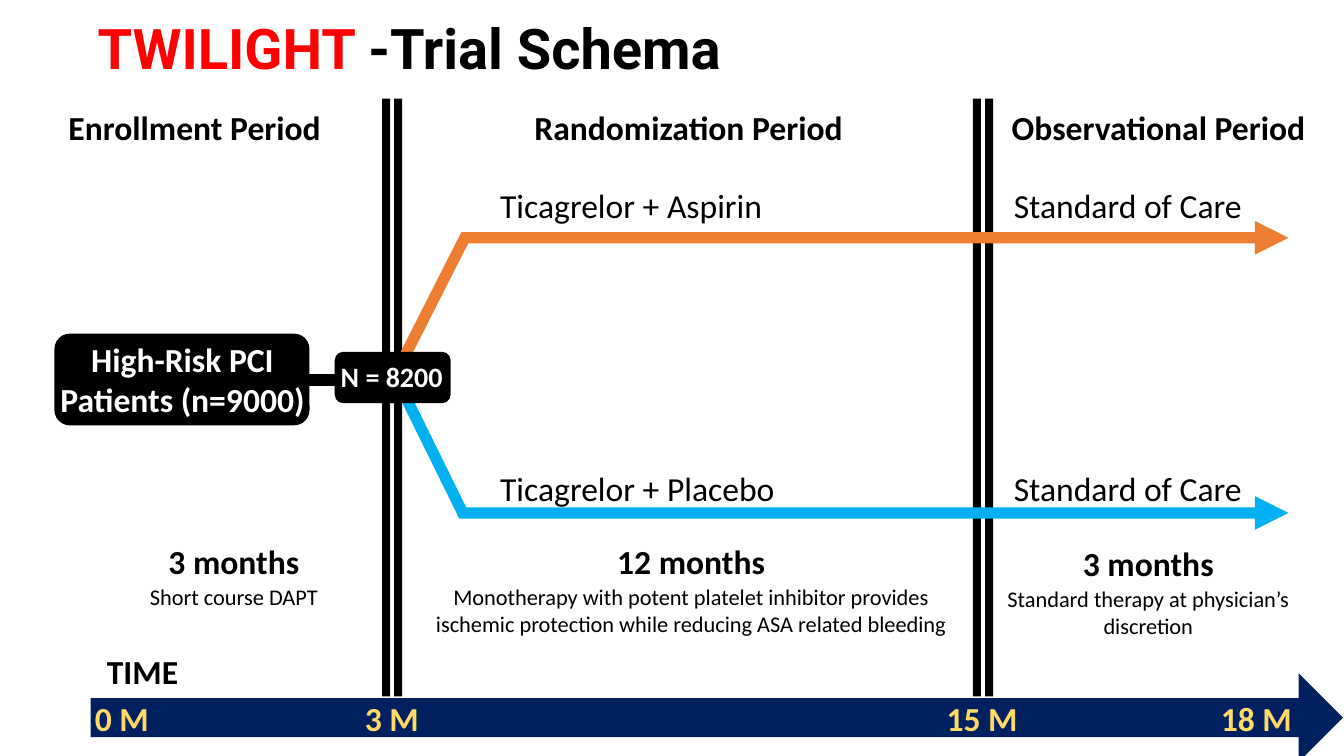
from lxml import etree
from pptx import Presentation
from pptx.dml.color import RGBColor
from pptx.enum.shapes import MSO_CONNECTOR, MSO_SHAPE
from pptx.enum.text import PP_ALIGN
from pptx.oxml.ns import qn
from pptx.util import Inches, Pt

RECT = MSO_SHAPE.RECTANGLE
ROUND = MSO_SHAPE.ROUNDED_RECTANGLE
ARROW = MSO_SHAPE.RIGHT_ARROW
LINE = MSO_CONNECTOR.STRAIGHT
LEFT, MID = PP_ALIGN.LEFT, PP_ALIGN.CENTER

HUES = {"black": "000000", "white": "FFFFFF", "red": "FF0000", "navy": "002060",
        "orange": "ED7D31", "blue": "00B0F0", "gold": "FFD966"}
BASE = {"name": "Calibri", "size": Pt(24), "bold": False}
HEAD = BASE | {"bold": True}
NOTE = BASE | {"size": Pt(16)}
COUNT = HEAD | {"size": Pt(20)}
TITLE = HEAD | {"name": "Roboto", "size": Pt(40)}
PAD = (0.1, 0.05, 0.1, 0.05)
SLIM = (0, 0.05, 0, 0.05)
HALF = (0.1, 0.05, 0, 0.05)
SIDES = ("left", "top", "right", "bottom")


def color(hue):
    return RGBColor.from_string(HUES[hue])


def add_run(para, words, style, hue):
    run = para.add_run()
    run.text = words
    for name, value in style.items():
        setattr(run.font, name, value)
    run.font.color.rgb = color(hue)


def add_text(slide, place, paras, align=LEFT, inset=PAD):
    frame = slide.shapes.add_textbox(*map(Inches, place)).text_frame
    frame.word_wrap = True
    for side, gap in zip(SIDES, inset):
        setattr(frame, f"margin_{side}", Inches(gap))
    for index, runs in enumerate(paras):
        para = frame.add_paragraph() if index else frame.paragraphs[0]
        para.alignment = align
        if index:
            para.space_before = Pt(1)
        for run in runs:
            add_run(para, *run)


def add_label(slide, place, words, style=BASE, hue="black", align=LEFT, inset=PAD):
    add_text(slide, place, [[(words, style, hue)]], align, inset)


def add_block(slide, kind, place, hue):
    block = slide.shapes.add_shape(kind, *map(Inches, place))
    block.shadow.inherit = False
    block.fill.solid()
    block.fill.fore_color.rgb = color(hue)
    block.line.fill.background()
    return block


def add_arm(slide, points, hue):
    spots = [(Inches(x), Inches(y)) for x, y in points]
    pen = slide.shapes.build_freeform(*spots[0])
    pen.add_line_segments(spots[1:], close=False)
    arm = pen.convert_to_shape()
    arm.shadow.inherit = False
    arm.fill.background()
    arm.line.color.rgb = color(hue)
    arm.line.width = Pt(8)
    edge = arm.line._get_or_add_ln()
    etree.SubElement(edge, qn("a:miter"), lim="800000")
    etree.SubElement(edge, qn("a:tailEnd"), type="triangle")


def add_link(slide, start, end, hue):
    link = slide.shapes.add_connector(LINE, *map(Inches, start + end))
    link.line.color.rgb = color(hue)
    link.line.width = Pt(8)
    etree.SubElement(link._element.spPr, qn("a:effectLst"))


def add_time(slide):
    arrow = add_block(slide, ARROW, (0.9, 6.68, 12.42, 0.88), "navy")
    arrow.adjustments[0] = 0.44
    for left in (3.79, 9.65):
        for shift in (0, 0.12):
            add_block(slide, RECT, (left + shift, 0.98, 0.08, 5.93), "black")
    for left, width, words, inset in (
        (0.94, 0.6, "0 M", SLIM),
        (3.52, 0.76, "3 M", PAD),
        (9.29, 0.99, "15 M", PAD),
        (12.01, 0.99, "18 M", PAD),
    ):
        add_label(slide, (left, 6.87, width, 0.5), words, HEAD, "gold", inset=inset)
    add_label(slide, (1.06, 6.41, 0.8, 0.5), "TIME", HEAD, inset=SLIM)


def add_phases(slide):
    for left, width, words in (
        (0.09, 3.68, "Enrollment Period"),
        (4.08, 5.5, "Randomization Period"),
        (9.88, 3.22, "Observational Period"),
    ):
        add_label(slide, (left, 1.01, width, 0.5), words, HEAD, align=MID)
    for place, span, note, inset in (
        ((0.87, 5.32, 2.9, 0.79), "3 months", "Short course DAPT", PAD),
        ((4.03, 5.32, 5.55, 1.06), "12 months",
         "Monotherapy with potent platelet inhibitor provides ischemic protection "
         "while reducing ASA related bleeding", HALF),
        ((9.89, 5.34, 2.9, 1.06), "3 months",
         "Standard therapy at physician’s discretion", HALF),
    ):
        paras = [[(span, HEAD, "black")], [(note, NOTE, "black")]]
        add_text(slide, place, paras, MID, inset)


def add_arms(slide):
    for start, bend, level, top, drug, hue in (
        (3.72, 4.61, 2.36, 1.79, "Aspirin", "orange"),
        (3.73, 4.59, 5.09, 4.59, "Placebo", "blue"),
    ):
        add_arm(slide, [(3.92, start), (bend, level), (12.78, level)], hue)
        add_label(slide, (4.96, top, 2.88, 0.5), f"Ticagrelor + {drug}", inset=SLIM)
        add_label(slide, (9.99, top, 2.39, 0.5), "Standard of Care", align=MID, inset=SLIM)


def add_groups(slide):
    add_link(slide, (2.03, 3.77), (3.97, 3.77), "black")
    add_block(slide, ROUND, (0.54, 3.31, 2.53, 0.91), "black")
    add_label(slide, (0.59, 3.31, 2.44, 0.91), "High-Risk PCI Patients (n=9000)",
              HEAD, "white", MID, SLIM)
    add_block(slide, ROUND, (3.32, 3.49, 1.15, 0.51), "black")
    add_label(slide, (3.38, 3.57, 1.07, 0.34), "N = 8200", COUNT, "white",
              inset=(0, 0, 0, 0))


def main():
    deck = Presentation()
    deck.slide_width, deck.slide_height = Inches(13.33), Inches(7.5)
    slide = deck.slides.add_slide(deck.slide_layouts[6])
    title = [("TWILIGHT ", TITLE, "red"), ("-Trial Schema", TITLE, "black")]
    add_text(slide, (0.87, 0.13, 12.46, 0.67), [title], inset=(0.1, 0, 0.1, 0))
    add_time(slide)
    add_phases(slide)
    add_arms(slide)
    add_groups(slide)
    deck.save("out.pptx")


if __name__ == "__main__":
    main()
